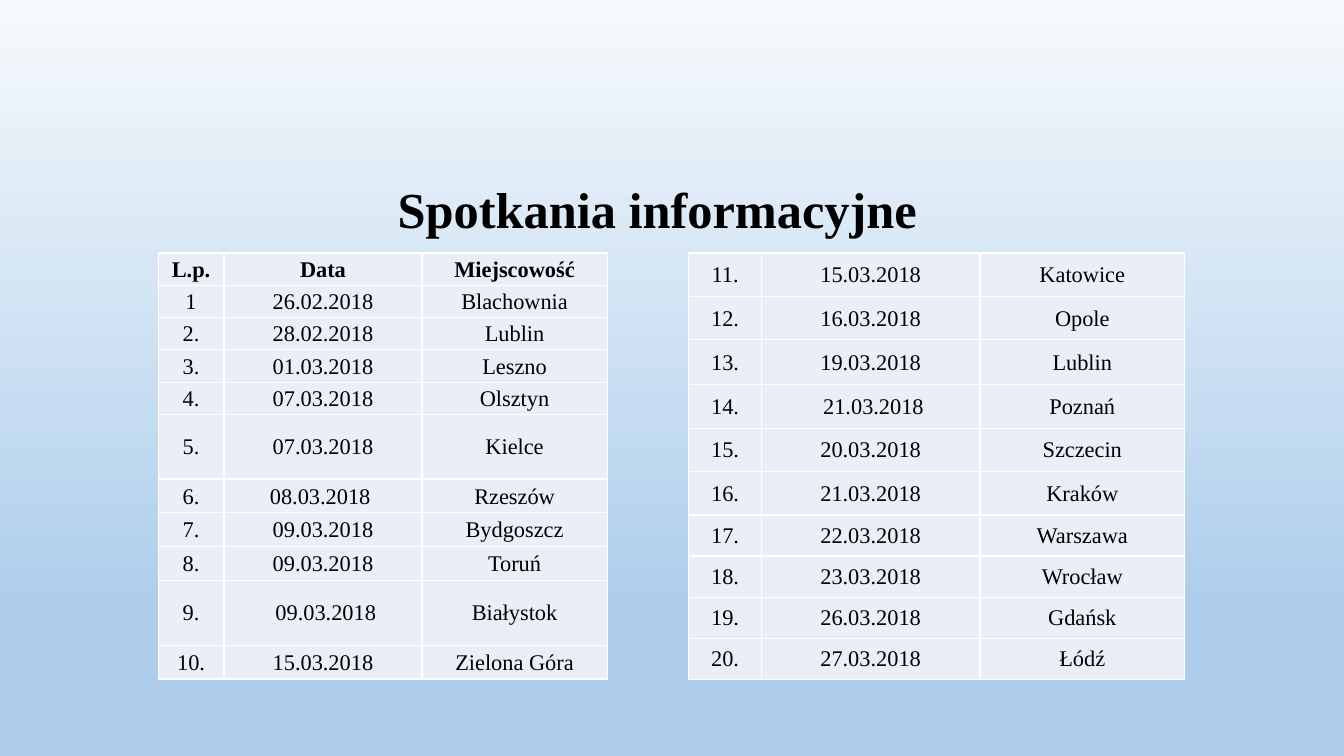
from dataclasses import dataclass

from lxml.etree import SubElement
from pptx import Presentation
from pptx.dml.color import RGBColor as RGB
from pptx.enum.text import MSO_ANCHOR as Anchor, PP_ALIGN as Align
from pptx.oxml.ns import qn
from pptx.util import Pt


@dataclass(frozen=True)
class Theme:
    font: str = "Times New Roman"
    title_size: int = 36
    cell_size: int = 16
    ink: str = "000000"
    cell: str = "EAEFF7"
    border: str = "FFFFFF"
    sky_top: str = "F5F9FC"
    sky_bottom: str = "ADCDEA"


THEME = Theme()

HEADER = ("L.p.", "Data", "Miejscowość")
FIRST_MEETINGS = [
    ("1", "26.02.2018", "Blachownia"),
    ("2.", "28.02.2018", "Lublin"),
    ("3.", "01.03.2018", "Leszno"),
    ("4.", "07.03.2018", "Olsztyn"),
    ("5.", "07.03.2018", "Kielce"),
    ("6.", "08.03.2018 ", "Rzeszów"),
    ("7.", "09.03.2018", "Bydgoszcz"),
    ("8.", "09.03.2018", "Toruń"),
    ("9.", " 09.03.2018", "Białystok"),
    ("10.", "15.03.2018", "Zielona Góra"),
]
LATER_MEETINGS = [
    ("11.", "15.03.2018", "Katowice"),
    ("12.", "16.03.2018", "Opole"),
    ("13.", "19.03.2018", "Lublin"),
    ("14.", " 21.03.2018", "Poznań"),
    ("15.", "20.03.2018", "Szczecin"),
    ("16.", "21.03.2018", "Kraków"),
    ("17.", "22.03.2018", "Warszawa"),
    ("18.", "23.03.2018", "Wrocław"),
    ("19.", "26.03.2018", "Gdańsk"),
    ("20.", "27.03.2018", "Łódź"),
]


def style_text(frame, size, bold):
    frame.vertical_anchor = Anchor.MIDDLE
    paragraph = frame.paragraphs[0]
    paragraph.alignment = Align.CENTER
    for run in paragraph.runs:
        run.font.name = THEME.font
        run.font.size = Pt(size)
        run.font.bold = bold
        run.font.color.rgb = RGB.from_string(THEME.ink)


def paint_background(slide):
    fill = slide.background.fill
    fill.gradient()
    fill.gradient_angle = 270
    sky = ((0.01, THEME.sky_top), (0.82, THEME.sky_bottom))
    for stop, (position, colour) in zip(fill.gradient_stops, sky):
        stop.position = position
        stop.color.rgb = RGB.from_string(colour)


def place_title(slide, text, left, top, width, height):
    title = slide.shapes.title
    title.left, title.top = Pt(left), Pt(top)
    title.width, title.height = Pt(width), Pt(height)
    title.text_frame.text = text
    title.text_frame.paragraphs[0].line_spacing = 0.9
    style_text(title.text_frame, THEME.title_size, True)


def add_borders(cell):
    # Border lines come before the fill in the cell properties
    properties = cell._tc.get_or_add_tcPr()
    for position, side in enumerate(("lnL", "lnR", "lnT", "lnB")):
        line = SubElement(properties, qn(f"a:{side}"), w=str(Pt(1)))
        solid = SubElement(line, qn("a:solidFill"))
        SubElement(solid, qn("a:srgbClr"), val=THEME.border)
        properties.insert(position, line)


def add_meetings(slide, rows, left, top, widths, heights):
    schedule = slide.shapes.add_table(
        len(rows), len(widths), Pt(left), Pt(top),
        Pt(sum(widths)), Pt(sum(heights))).table
    schedule.first_row = schedule.horz_banding = False
    for column, width in zip(schedule.columns, widths):
        column.width = Pt(width)
    for row, height, entries in zip(schedule.rows, heights, rows):
        row.height = Pt(height)
        for cell, entry in zip(row.cells, entries):
            cell.margin_left = cell.margin_right = cell.margin_top = Pt(0.7)
            cell.margin_bottom = 0
            cell.vertical_anchor = Anchor.MIDDLE
            cell.fill.solid()
            cell.fill.fore_color.rgb = RGB.from_string(THEME.cell)
            add_borders(cell)
            cell.text_frame.text = entry
            style_text(cell.text_frame, THEME.cell_size, entries is HEADER)


def build_schedule_slide(deck):
    slide = deck.slides.add_slide(deck.slide_layouts[5])
    paint_background(slide)
    place_title(slide, "Spotkania informacyjne", 55.5, 122.4, 828, 58.3)

    # Two tables side by side; a few rows are taller
    tables_top = 180.7
    add_meetings(slide, [HEADER] + FIRST_MEETINGS, 113, tables_top,
                 (47, 141.4, 132.4),
                 [23.1] * 5 + [46.1] + [24.2] * 3 + [46.1, 24.2])
    add_meetings(slide, LATER_MEETINGS, 492, tables_top,
                 (51.8, 156.2, 146.2),
                 [31] * 2 + [32.2] + [31] * 3 + [29.4] * 4)


def main():
    deck = Presentation()
    deck.slide_width, deck.slide_height = Pt(960), Pt(540)
    build_schedule_slide(deck)
    deck.save("out.pptx")


if __name__ == "__main__":
    main()
